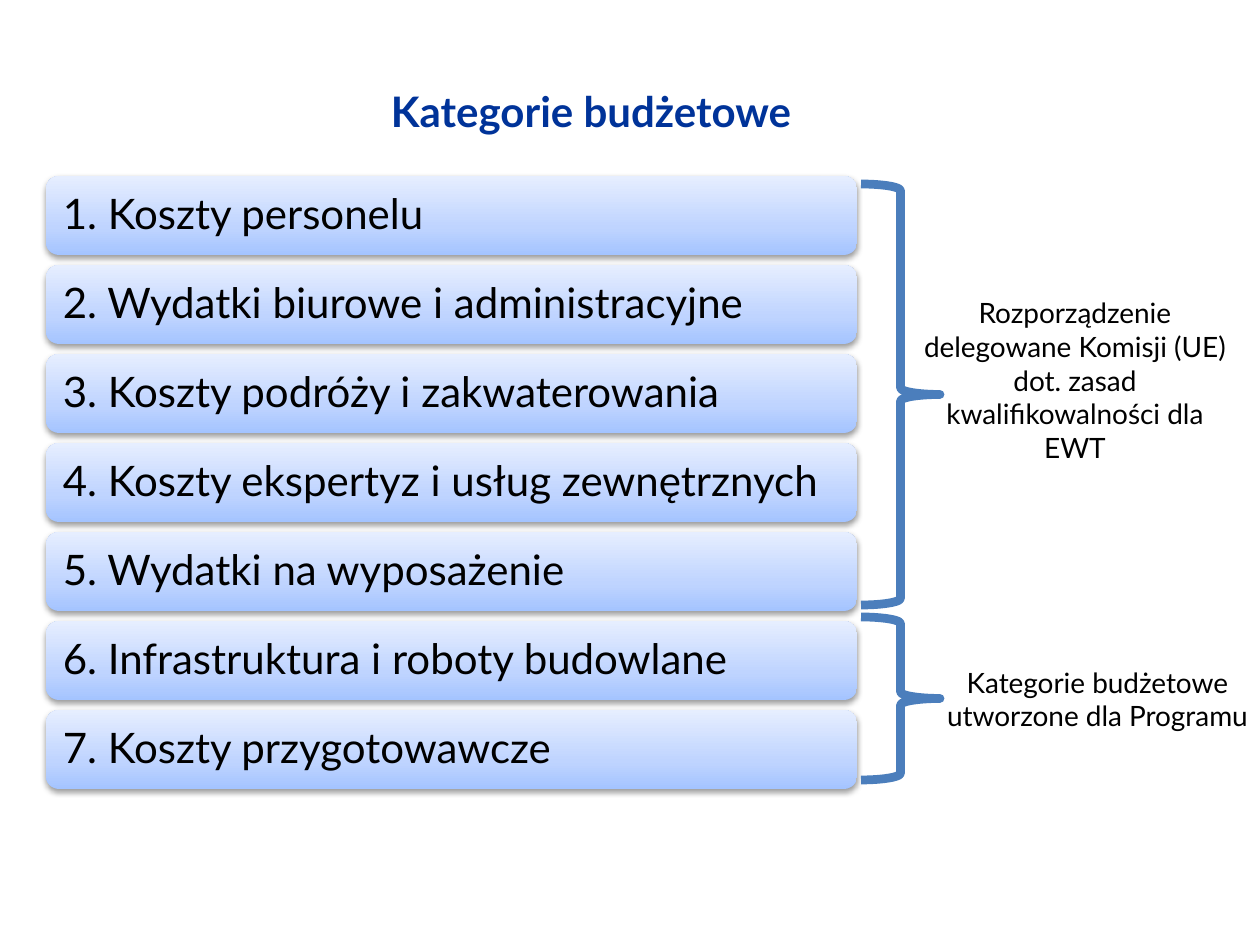
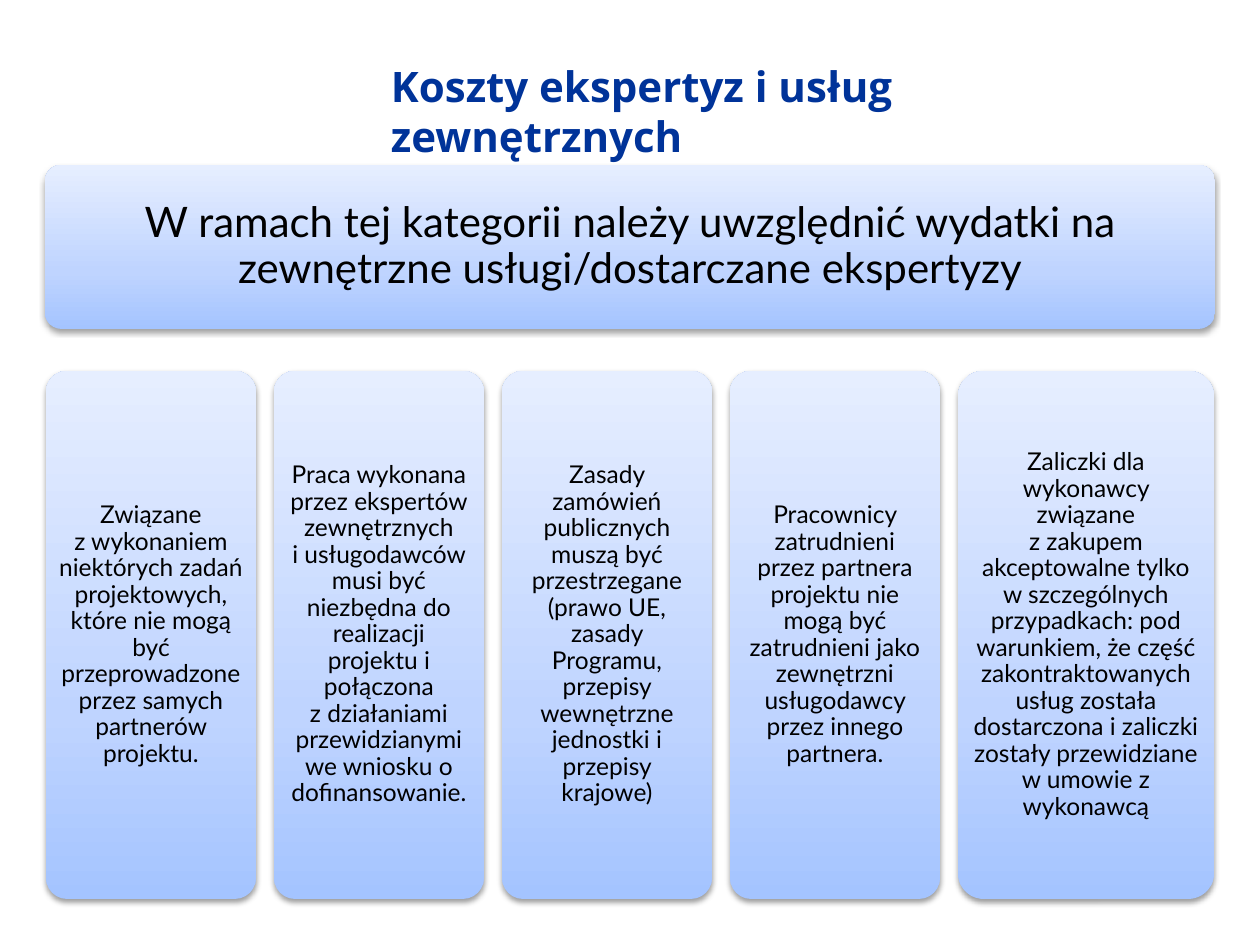
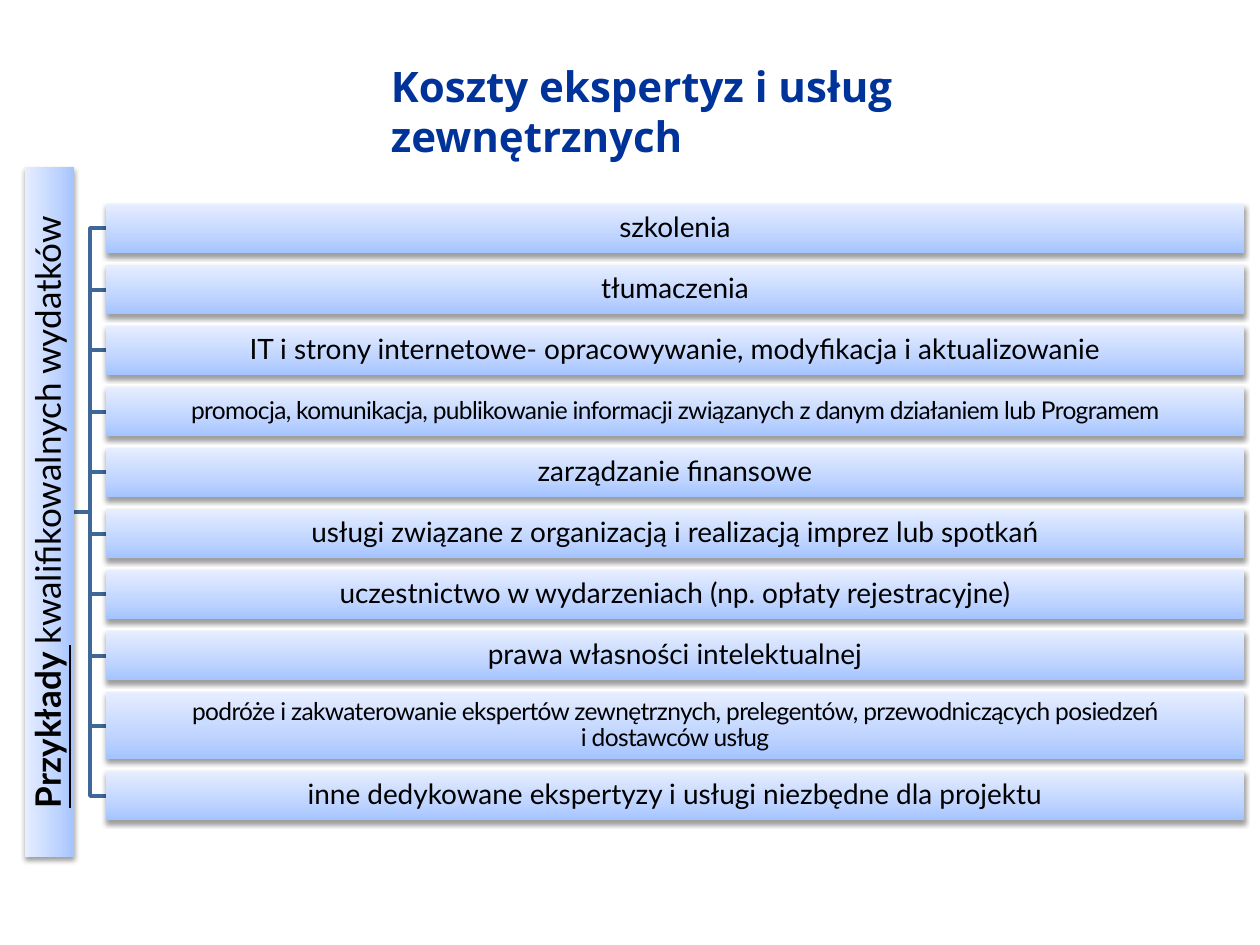
"""Build three slides on budget categories and the costs of external expertise."""
import pptx
import pptx.dml.color
import pptx.enum.shapes
import pptx.enum.text
import pptx.oxml
import pptx.oxml.ns
import pptx.util

SCALE = 914400 / 126
SLIDE_SIZE = (1260, 945)
TITLE_BOX = (378, 63, 788, 95)
BODY_FONT, TITLE_FONT = "Lato", "Open Sans"
TEXT, TITLE, BRACE, BRANCH = "000000", "003399", "4B7EBC", "3F6797"
GRADIENT = [(0, "A4C4FF"), (35, "BFD4FF"), (100, "E6EEFF")]

SHAPE = pptx.enum.shapes.MSO_SHAPE
LEFT, CENTER = pptx.enum.text.PP_ALIGN.LEFT, pptx.enum.text.PP_ALIGN.CENTER
TOP, MIDDLE = pptx.enum.text.MSO_ANCHOR.TOP, pptx.enum.text.MSO_ANCHOR.MIDDLE

CATEGORIES_TITLE = "Kategorie budżetowe"
EXPERTISE_TITLE = "Koszty ekspertyz i usług zewnętrznych"
CATEGORIES = [
    "1. Koszty personelu",
    "2. Wydatki biurowe i administracyjne",
    "3. Koszty podróży i zakwaterowania",
    "4. Koszty ekspertyz i usług zewnętrznych",
    "5. Wydatki na wyposażenie",
    "6. Infrastruktura i roboty budowlane",
    "7. Koszty przygotowawcze",
]
BRACES = [(861, 184, 79, 421), (861, 617, 79, 163)]
BRACE_LABELS = [
    ((907, 290, 336, 267), ["Rozporządzenie", "delegowane Komisji (UE)", "dot. zasad kwalifikowalności dla EWT"]),
    ((931, 659, 333, 81), ["Kategorie budżetowe utworzone dla Programu"]),
]
SCOPE = "W ramach tej kategorii należy uwzględnić wydatki na zewnętrzne usługi/dostarczane ekspertyzy"
CONDITIONS = [
    (210, "Związane\vz wykonaniem niektórych zadań projektowych, które nie mogą być przeprowadzone "
          "przez samych partnerów projektu."),
    (210, "Praca wykonana przez ekspertów zewnętrznych\vi usługodawców musi być niezbędna do realizacji "
          "projektu i połączona\vz działaniami przewidzianymi we wniosku o dofinansowanie."),
    (210, "Zasady zamówień publicznych muszą być przestrzegane (prawo UE, zasady Programu, "
          "przepisy wewnętrzne jednostki i przepisy krajowe)"),
    (210, "Pracownicy zatrudnieni przez partnera projektu nie mogą być zatrudnieni jako zewnętrzni "
          "usługodawcy przez innego partnera."),
    (256, "Zaliczki dla wykonawcy związane\vz zakupem akceptowalne tylko\vw szczególnych przypadkach: pod "
          "warunkiem, że część zakontraktowanych usług została dostarczona i zaliczki zostały przewidziane "
          "w umowie z wykonawcą"),
]
EXAMPLES_HEADING = ("Przykłady ", "kwalifikowalnych wydatków")
EXAMPLES = [
    (49, 16, "szkolenia"),
    (49, 16, "tłumaczenia"),
    (49, 16, "IT i strony internetowe- opracowywanie, modyfikacja i aktualizowanie"),
    (49, 14, "promocja, komunikacja, publikowanie informacji związanych z danym działaniem lub Programem"),
    (49, 16, "zarządzanie finansowe"),
    (49, 16, "usługi związane z organizacją i realizacją imprez lub spotkań"),
    (49, 16, "uczestnictwo w wydarzeniach (np. opłaty rejestracyjne)"),
    (49, 16, "prawa własności intelektualnej"),
    (67, 14, "podróże i zakwaterowanie ekspertów zewnętrznych, prelegentów, przewodniczących posiedzeń"
             "\vi dostawców usług"),
    (49, 16, "inne dedykowane ekspertyzy i usługi niezbędne dla projektu"),
]


def emu(*pixels):
    return [round(pixel * SCALE) for pixel in pixels]


def color(value):
    return pptx.dml.color.RGBColor.from_string(value)


def write(shape, lines, size, align=CENTER, anchor=MIDDLE, insets=(13, 6), spacing=1.0,
          font=BODY_FONT, ink=TEXT, bold=None):
    frame = shape.text_frame
    frame.word_wrap = True
    frame.vertical_anchor = anchor
    frame.margin_left = frame.margin_right = emu(insets[0])[0]
    frame.margin_top = frame.margin_bottom = emu(insets[1])[0]
    frame.text = "\n".join(lines)
    for paragraph in frame.paragraphs:
        paragraph.alignment = align
        paragraph.line_spacing = spacing
        paragraph.font.name = font
        paragraph.font.size = pptx.util.Pt(size)
        paragraph.font.bold = bold
        paragraph.font.color.rgb = color(ink)


def add_text(slide, box, lines, size, **style):
    write(slide.shapes.add_textbox(*emu(*box)), lines, size, **style)


def add_panel(slide, kind, box, text, size, inset, align=CENTER):
    """Add a gradient panel with a soft shadow and its text."""
    panel = slide.shapes.add_shape(kind, *emu(*box))
    panel.line.fill.background()
    namespace = pptx.oxml.ns.nsdecls("a")
    stops = "".join(f'<a:gs pos="{position * 1000}"><a:srgbClr val="{value}"/></a:gs>'
                    for position, value in GRADIENT)
    properties = panel._element.spPr
    properties.find(pptx.oxml.ns.qn("a:ln")).addprevious(pptx.oxml.parse_xml(
        f'<a:gradFill {namespace} rotWithShape="1"><a:gsLst>{stops}</a:gsLst>'
        '<a:lin ang="16200000" scaled="1"/></a:gradFill>'))
    properties.append(pptx.oxml.parse_xml(
        f'<a:effectLst {namespace}><a:outerShdw blurRad="40000" dist="20000" dir="5400000" '
        'rotWithShape="0"><a:srgbClr val="000000"><a:alpha val="38000"/></a:srgbClr>'
        '</a:outerShdw></a:effectLst>'))
    write(panel, [text], size, align, insets=(inset, inset), spacing=0.9)
    return panel


def style_outline(shape, value, width):
    shape.shadow.inherit = False
    shape.fill.background()
    shape.line.color.rgb = color(value)
    shape.line.width = pptx.util.Pt(width)


def add_slide(presentation, title, font):
    slide = presentation.slides.add_slide(presentation.slide_layouts[6])
    add_text(slide, TITLE_BOX, [title], 24, align=LEFT, font=font, ink=TITLE, bold=True)
    return slide


def build_categories(presentation):
    slide = add_slide(presentation, CATEGORIES_TITLE, BODY_FONT)
    for index, category in enumerate(CATEGORIES):
        box = (46, 176 + index * 89, 811, 79)
        add_panel(slide, SHAPE.ROUNDED_RECTANGLE, box, category, 24, 13, LEFT)
    for box in BRACES:
        style_outline(slide.shapes.add_shape(SHAPE.RIGHT_BRACE, *emu(*box)), BRACE, 5)
    for box, lines in BRACE_LABELS:
        add_text(slide, box, lines, 16, anchor=TOP)


def build_conditions(presentation):
    slide = add_slide(presentation, EXPERTISE_TITLE, TITLE_FONT)
    scope = add_panel(slide, SHAPE.ROUNDED_RECTANGLE, (45, 165, 1170, 164), SCOPE, 24, 13)
    scope.adjustments[0] = 0.1
    left, gap = 46, 18
    for width, text in CONDITIONS:
        card = add_panel(slide, SHAPE.ROUNDED_RECTANGLE, (left, 371, width, 528), text, 14, 7)
        card.adjustments[0] = 0.1
        left += width + gap


def build_examples(presentation):
    slide = add_slide(presentation, EXPERTISE_TITLE, TITLE_FONT)
    root_x, spine_x, row_x, root_y = 74, 90, 106, 512
    top, gap = 204, 12
    rows = []
    for height, size, text in EXAMPLES:
        rows.append(((row_x, top, 1138, height), size, text))
        middle = top + height / 2
        branch = slide.shapes.build_freeform(root_x, root_y, scale=SCALE)
        branch.add_line_segments([(spine_x, root_y), (spine_x, middle), (row_x, middle)], close=False)
        style_outline(branch.convert_to_shape(), BRANCH, 2)
        top += height + gap

    length, thickness = 690, 49
    heading_box = (root_x - (length + thickness) / 2, root_y - thickness / 2, length, thickness)
    heading = add_panel(slide, SHAPE.RECTANGLE, heading_box, EXAMPLES_HEADING[0], 20, 1)
    heading.rotation = 270
    paragraph = heading.text_frame.paragraphs[0]
    paragraph.runs[0].font.bold = True
    paragraph.runs[0].font.underline = True
    paragraph.add_run().text = EXAMPLES_HEADING[1]

    for box, size, text in rows:
        row = add_panel(slide, SHAPE.RECTANGLE, box, text, size, 1)
        if size == 14:
            for run in row.text_frame.paragraphs[0].runs:
                run._r.get_or_add_rPr().set("spc", "-40")


def main():
    presentation = pptx.Presentation()
    presentation.slide_width, presentation.slide_height = emu(*SLIDE_SIZE)
    build_categories(presentation)
    build_conditions(presentation)
    build_examples(presentation)
    presentation.save("out.pptx")


if __name__ == "__main__":
    main()
